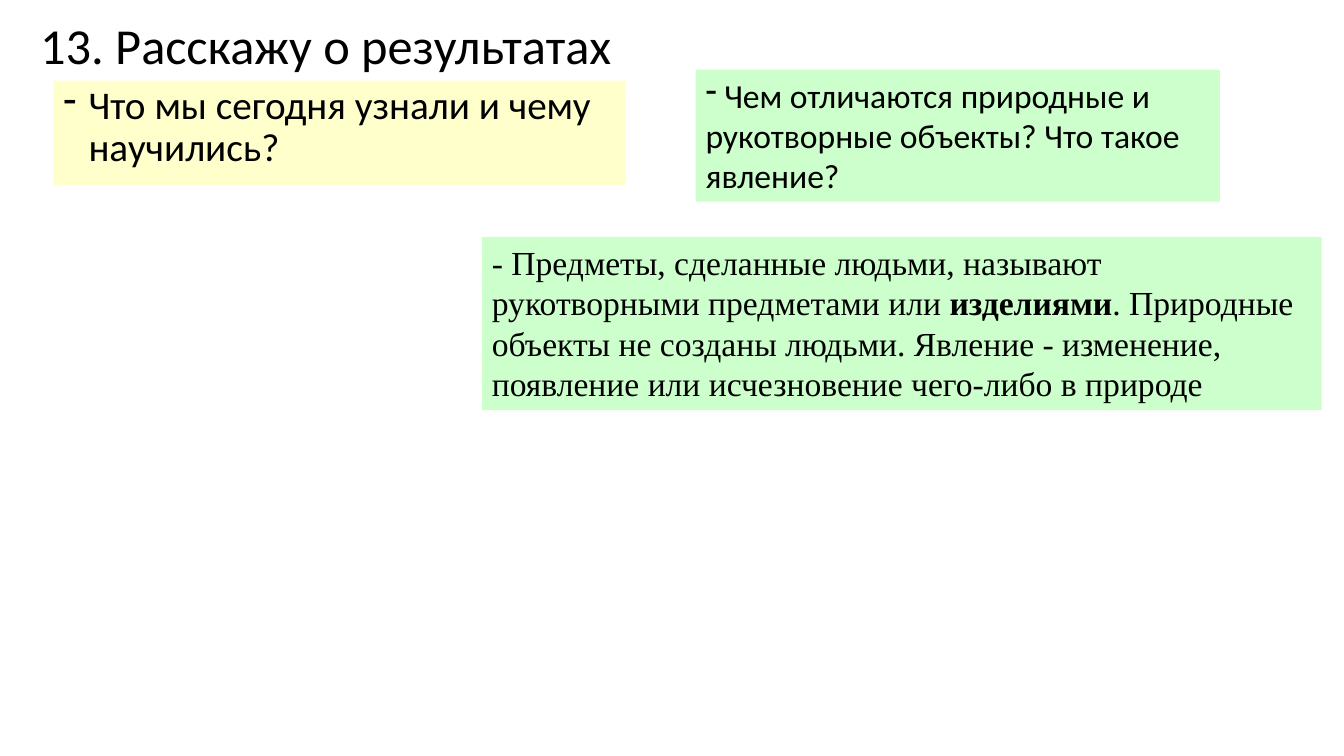
from lxml.etree import SubElement
from pptx import Presentation
from pptx.dml.color import RGBColor
from pptx.enum.text import MSO_ANCHOR, PP_ALIGN
from pptx.oxml.ns import qn
from pptx.util import Inches, Pt

BLACK, YELLOW, GREEN = "000000", "FFFFCC", "CCFFCC"


def color(code):
    return RGBColor.from_string(code)


def panel(slide, box, fill=None, anchor=MSO_ANCHOR.TOP):
    """Add a text box with an optional fill and return its text frame."""
    shape = slide.shapes.add_textbox(*map(Inches, box))
    if fill:
        shape.fill.solid()
        shape.fill.fore_color.rgb = color(fill)
    frame = shape.text_frame
    frame.word_wrap = True
    frame.vertical_anchor = anchor
    return frame


def dash(para, indent=0):
    """Give the paragraph a hyphen bullet with a hanging indent."""
    props = para._p.get_or_add_pPr()
    props.set("marL", str(Inches(indent)))
    props.set("indent", str(-Inches(indent)))
    SubElement(props, qn("a:buFontTx"))
    SubElement(props, qn("a:buChar")).set("char", "-")


def write(para, text, size, face="Calibri", bold=False):
    para.alignment = PP_ALIGN.LEFT
    run = para.add_run()
    run.text = text
    font = run.font
    font.name, font.size, font.bold = face, Pt(size), bold
    font.color.rgb = color(BLACK)


def title(slide, box):
    para = panel(slide, box, anchor=MSO_ANCHOR.MIDDLE).paragraphs[0]
    para.line_spacing = 0.9
    write(para, "13. Расскажу о результатах", 36)


def summary(slide, box):
    para = panel(slide, box, YELLOW).paragraphs[0]
    para.line_spacing = 0.9
    dash(para, 0.25)
    write(para, "Что мы сегодня узнали и чему научились?", 28)


def question(slide, box):
    frame = panel(slide, box, GREEN)
    lines = (" Чем отличаются природные и",
             "рукотворные объекты? Что такое",
             "явление?")
    for i, line in enumerate(lines):
        para = frame.add_paragraph() if i else frame.paragraphs[0]
        if i == 0:
            dash(para)
        write(para, line, 24)


def answer(slide, box):
    para = panel(slide, box, GREEN).paragraphs[0]
    runs = (
        ("- Предметы, сделанные людьми, называют рукотворными предметами или ", False),
        ("изделиями", True),
        (". Природные объекты не созданы людьми. Явление - изменение, "
         "появление или исчезновение чего-либо в природе", False),
    )
    for text, bold in runs:
        write(para, text, 24, "Times New Roman", bold)


def main():
    deck = Presentation()
    deck.slide_width, deck.slide_height = Inches(13.33), Inches(7.5)
    slide = deck.slides.add_slide(deck.slide_layouts[6])
    title(slide, (0.3, 0.19, 11.5, 0.57))
    summary(slide, (0.53, 0.8, 5.67, 1.04))
    question(slide, (6.9, 0.69, 5.2, 1.31))
    answer(slide, (4.78, 2.35, 8.33, 1.72))
    deck.save("out.pptx")


if __name__ == "__main__":
    main()
